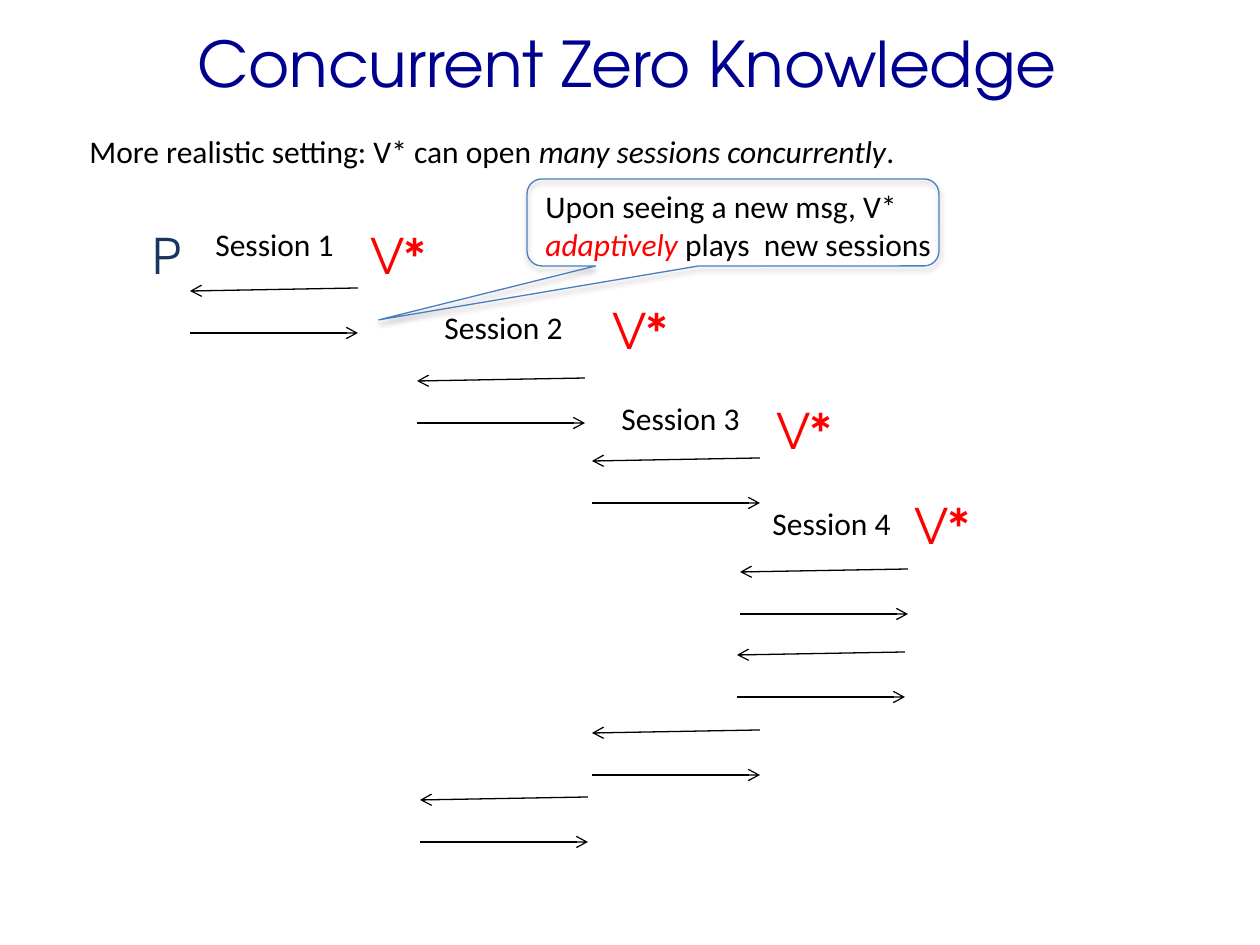
from typing import NamedTuple

from lxml.etree import SubElement
from pptx import Presentation
from pptx.dml.color import RGBColor
from pptx.enum.shapes import MSO_CONNECTOR as Connector, MSO_SHAPE as Shape
from pptx.enum.text import MSO_ANCHOR as Anchor, PP_ALIGN as Align
from pptx.oxml.ns import qn
from pptx.util import Pt

EMU_PER_PX = 914400 / 126
BODY_FONT = "Calibri"
DISPLAY_FONT = "TeX Gyre Adventor"
BLACK, RED, NAVY, BLUE = "000000", "FF0000", "17375E", "000090"
ARROW_WIDTH = 168
REPLY_GAP = 42
ARROW_SLOPE = 3


class Span(NamedTuple):
    text: str
    color: str = BLACK
    italic: bool = False
    size: int = 18
    font: str = BODY_FONT


class Session(NamedTuple):
    label: str
    label_at: tuple[int, int]
    verifier_at: tuple[int, int]


class Exchange(NamedTuple):
    left: int
    reply_y: int


SESSIONS = [
    Session("Session 1", (203, 219), (358, 219)),
    Session("Session 2", (432, 302), (600, 294)),
    Session("Session 3", (609, 393), (764, 394)),
    Session("Session 4", (760, 498), (902, 489)),
]
EXCHANGES = [
    Exchange(190, 333),
    Exchange(417, 423),
    Exchange(592, 503),
    Exchange(740, 614),
    Exchange(737, 697),
    Exchange(592, 775),
    Exchange(420, 842),
]


def px(*lengths: int) -> list[int]:
    return [round(length * EMU_PER_PX) for length in lengths]


def rgb(color: str) -> RGBColor:
    return RGBColor.from_string(color)


def add_text(page, area: tuple[int, int, int, int], *lines: list[Span], wrap: bool = True):
    box = page.shapes.add_textbox(*px(*area))
    frame = box.text_frame
    frame.word_wrap = wrap
    for index, spans in enumerate(lines):
        para = frame.add_paragraph() if index else frame.paragraphs[0]
        for span in spans:
            run = para.add_run()
            run.text = span.text
            run.font.name = span.font
            run.font.size = Pt(span.size)
            run.font.italic = span.italic
            run.font.color.rgb = rgb(span.color)
    return box


def add_letter(page, text: str, color: str, at: tuple[int, int], width: int) -> None:
    add_text(page, (*at, width, 72), [Span(text, color, size=28, font=DISPLAY_FONT)])


def add_arrow(page, start: tuple[int, int], end: tuple[int, int]) -> None:
    arrow = page.shapes.add_connector(Connector.STRAIGHT, *px(*start, *end))
    arrow.line.color.rgb = rgb(BLACK)
    arrow.line.width = Pt(0.75)
    SubElement(arrow.line._get_or_add_ln(), qn("a:tailEnd"), type="arrow")
    SubElement(arrow._element.spPr, qn("a:effectLst"))


def add_exchange(page, exchange: Exchange) -> None:
    left, reply_y = exchange
    right = left + ARROW_WIDTH
    message_y = reply_y - REPLY_GAP
    add_arrow(page, (right, message_y - ARROW_SLOPE), (left, message_y))
    add_arrow(page, (left, reply_y), (right, reply_y))


def add_session(page, session: Session) -> None:
    add_text(page, (*session.label_at, 155, 50), [Span(session.label)])
    add_letter(page, "V*", RED, session.verifier_at, 97)


def add_callout(page) -> None:
    callout = page.shapes.add_shape(Shape.ROUNDED_RECTANGULAR_CALLOUT, *px(527, 179, 412, 87))
    for index, value in enumerate((-0.86, 1.12, 0.17)):
        callout.adjustments[index] = value
    callout.fill.background()
    callout.line.color.rgb = rgb("4B7EBC")
    callout.line.width = Pt(0.75)
    callout.shadow.inherit = False
    effects = callout._element.spPr.find(qn("a:effectLst"))
    shadow = SubElement(effects, qn("a:outerShdw"), blurRad=str(Pt(3.1)), dist=str(Pt(1.8)),
                        dir="5400000", rotWithShape="0")
    shade = SubElement(shadow, qn("a:srgbClr"), val=BLACK)
    SubElement(shade, qn("a:alpha"), val="35000")
    add_text(page, (533, 181, 467, 89),
             [Span("Upon seeing a new msg, V*")],
             [Span("adaptively ", RED, True), Span("plays  new sessions")])


def main() -> None:
    deck = Presentation()
    deck.slide_width, deck.slide_height = px(1260, 945)
    page = deck.slides.add_slide(deck.slide_layouts[6])

    title = add_text(page, (60, -16, 1134, 157),
                     [Span("Concurrent Zero Knowledge", BLUE, size=36, font=DISPLAY_FONT)])
    title.text_frame.vertical_anchor = Anchor.MIDDLE
    title.text_frame.paragraphs[0].alignment = Align.CENTER

    add_text(page, (77, 126, 838, 50),
             [Span("More realistic setting: V* can open "),
              Span("many sessions concurrently", italic=True), Span(".")], wrap=False)

    add_letter(page, "P", NAVY, (140, 219), 63)
    for session in SESSIONS:
        add_session(page, session)
    for exchange in EXCHANGES:
        add_exchange(page, exchange)
    add_callout(page)

    deck.save("out.pptx")


if __name__ == "__main__":
    main()
